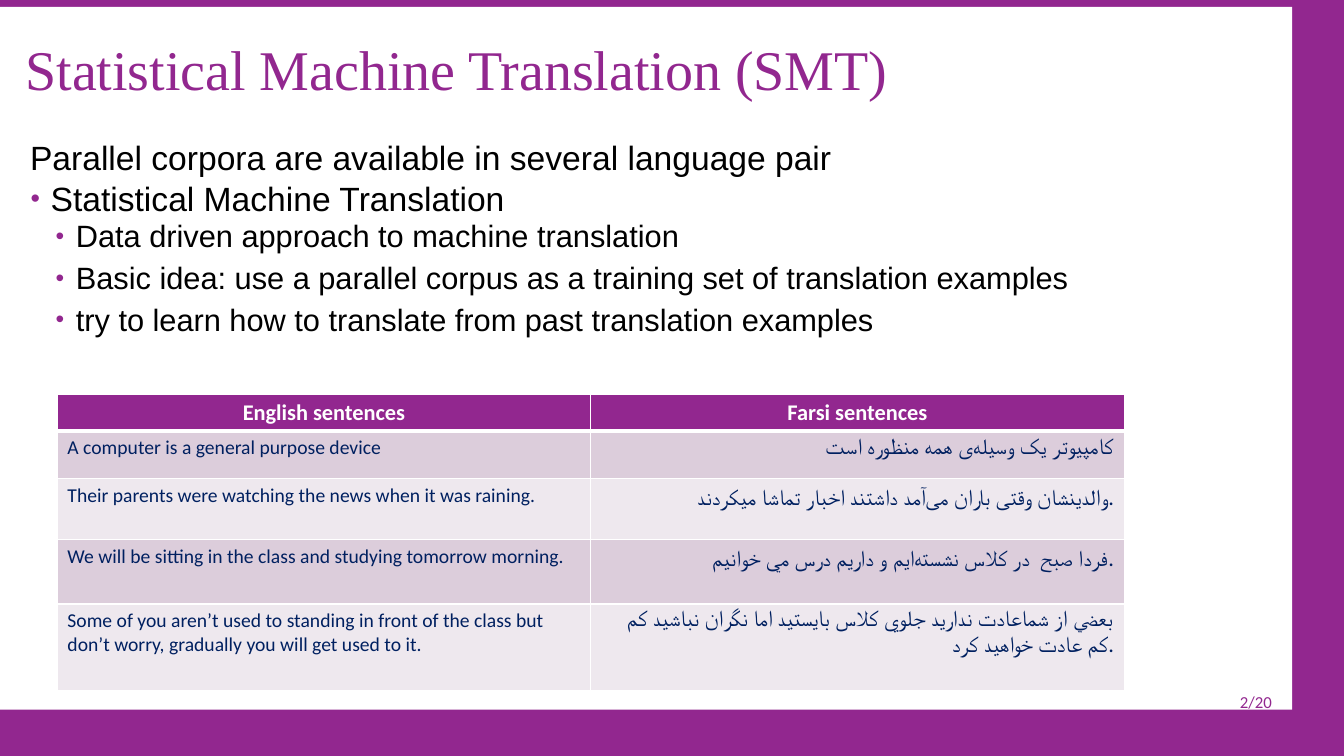
"""Build the slide on statistical machine translation with its sentence-pair table."""
from dataclasses import dataclass
from typing import Any

from lxml.etree import SubElement
from pptx import Presentation
from pptx.dml.color import RGBColor
from pptx.enum.shapes import MSO_SHAPE
from pptx.enum.text import MSO_ANCHOR, MSO_AUTO_SIZE, PP_ALIGN
from pptx.oxml.ns import qn
from pptx.util import Pt

PURPLE = RGBColor(0x92, 0x27, 0x8F)
WHITE = RGBColor(0xFF, 0xFF, 0xFF)
BLACK = RGBColor(0x00, 0x00, 0x00)
NAVY = RGBColor(0x00, 0x20, 0x60)
BAND_DARK = RGBColor(0xDC, 0xCD, 0xDB)
BAND_LIGHT = RGBColor(0xEE, 0xE8, 0xEE)
NON_JOINER = chr(0x200C)


@dataclass(frozen=True)
class Bullet:
    text: str
    level: int = 1
    size: float = 22
    before: float = 2
    after: float = 4


@dataclass(frozen=True)
class SentencePair:
    english: str
    farsi: str
    height: float


BULLETS = [
    Bullet("Statistical Machine Translation", 0, 24, 14, 0),
    Bullet("Data driven approach to machine translation"),
    Bullet("Basic idea: use a parallel corpus as a training set of translation examples"),
    Bullet("try to learn how to translate from past translation examples"),
]

PAIRS = [
    SentencePair("A computer is a general purpose device",
                 f"کامپیوتر یک وسیله{NON_JOINER}ی همه منظوره است", 34),
    SentencePair("Their parents were watching the news when it was raining.",
                 f"والدينشان وقتی باران می{NON_JOINER}آمد داشتند اخبار تماشا ميكردند.",
                 43.5),
    SentencePair("We will be sitting in the class and studying tomorrow morning.",
                 f"فردا صبح  در کلاس نشسته{NON_JOINER}ايم و داريم درس مي خوانيم.", 46),
    SentencePair("Some of you aren’t used to standing in front of the class but "
                 "don’t worry, gradually you will get used to it.",
                 "بعضي از شماعادت نداريد جلوي كلاس بايستيد اما نگران "
                 "نباشيد كم كم عادت خواهيد كرد.", 62),
]


def write(p: Any, text: str, *, size: float, color: RGBColor, font: str = "Calibri",
          bold: bool = False, align: PP_ALIGN = PP_ALIGN.LEFT, spacing: float = 1,
          before: float = 0, after: float = 0) -> None:
    p.alignment, p.line_spacing = align, spacing
    p.space_before, p.space_after = Pt(before), Pt(after)
    r = p.add_run()
    r.text = text
    r.font.size, r.font.name, r.font.bold = Pt(size), font, bold
    r.font.color.rgb = color


def place(sp: Any, left: float, top: float, width: float, height: float) -> None:
    sp.left, sp.top, sp.width, sp.height = Pt(left), Pt(top), Pt(width), Pt(height)


def add_panel(s: Any) -> None:
    sp = s.shapes.add_shape(MSO_SHAPE.RECTANGLE, Pt(0), Pt(5), Pt(923), Pt(502))
    sp.shadow.inherit = False
    sp.fill.solid()
    sp.fill.fore_color.rgb = WHITE
    sp.line.fill.background()
    s.shapes._spTree.insert(2, sp._element)


def add_label(s: Any, box: tuple[float, ...], text: str, anchor: MSO_ANCHOR,
              **style: Any) -> None:
    tf = s.shapes.add_textbox(*map(Pt, box)).text_frame
    tf.word_wrap = True
    tf.vertical_anchor = anchor
    write(tf.paragraphs[0], text, **style)


def add_bullet(p: Any, bullet: Bullet) -> None:
    p.level = bullet.level
    write(p, bullet.text, size=bullet.size, color=BLACK, font="Arial", spacing=0.9,
          before=bullet.before, after=bullet.after)
    pPr = p._p.get_or_add_pPr()
    pPr.set("marL", str(Pt(18 * (bullet.level + 1))))
    pPr.set("indent", str(-Pt(14.4)))
    color = SubElement(pPr, qn("a:buClr"))
    SubElement(color, qn("a:srgbClr"), val=str(PURPLE))
    SubElement(pPr, qn("a:buSzPct"), val="80000")
    SubElement(pPr, qn("a:buFont"), typeface="Arial")
    SubElement(pPr, qn("a:buChar"), char="•")


def fill_cell(cell: Any, text: str, fill: RGBColor, top: float, bottom: float,
              **style: Any) -> None:
    write(cell.text_frame.paragraphs[0], text, **style)
    tcPr = cell._tc.get_or_add_tcPr()
    for side, width in (("L", 1), ("R", 1), ("T", top), ("B", bottom)):
        ln = SubElement(tcPr, qn(f"a:ln{side}"), w=str(Pt(width)))
        SubElement(SubElement(ln, qn("a:solidFill")), qn("a:srgbClr"), val=str(WHITE))
    cell.fill.solid()
    cell.fill.fore_color.rgb = fill


def add_sentence_table(s: Any) -> None:
    heights = [26.5] + [pair.height for pair in PAIRS]
    table = s.shapes.add_table(len(heights), 2, Pt(41), Pt(281.5), Pt(762),
                               Pt(sum(heights))).table
    for row, height in zip(table.rows, heights):
        row.height = Pt(height)
    for col, text in enumerate(("English sentences", "Farsi sentences")):
        fill_cell(table.cell(0, col), text, PURPLE, 1, 3, size=16, color=WHITE,
                  bold=True, align=PP_ALIGN.CENTER)
    for i, pair in enumerate(PAIRS, 1):
        fill = BAND_DARK if i % 2 else BAND_LIGHT
        top = 3 if i == 1 else 1
        fill_cell(table.cell(i, 0), pair.english, fill, top, 1, size=14, color=NAVY)
        fill_cell(table.cell(i, 1), pair.farsi, fill, top, 1, size=16, color=NAVY,
                  align=PP_ALIGN.RIGHT)


def main() -> None:
    prs = Presentation()
    prs.slide_width, prs.slide_height = Pt(960), Pt(540)
    s = prs.slides.add_slide(prs.slide_layouts[1])
    s.background.fill.solid()
    s.background.fill.fore_color.rgb = PURPLE
    add_panel(s)

    title, body = s.shapes.title, s.placeholders[1]
    place(title, 11, 7, 906.5, 89.5)
    title.text_frame.vertical_anchor = MSO_ANCHOR.MIDDLE
    write(title.text_frame.paragraphs[0], "Statistical Machine Translation (SMT)",
          size=40, color=PURPLE, font="Times New Roman", spacing=0.9)

    place(body, 11, 126.5, 907, 353)
    tf = body.text_frame
    tf.auto_size = MSO_AUTO_SIZE.NONE
    for i, bullet in enumerate(BULLETS):
        add_bullet(tf.add_paragraph() if i else tf.paragraphs[0], bullet)

    add_label(s, (781, 486.5, 134.5, 29), "2/20", MSO_ANCHOR.MIDDLE, size=12,
              color=PURPLE, align=PP_ALIGN.RIGHT)
    add_sentence_table(s)
    add_label(s, (14.4, 94.5, 744, 65.5),
              "Parallel corpora are available in several language pair",
              MSO_ANCHOR.TOP, size=24, color=BLACK, font="Arial")
    prs.save("out.pptx")


if __name__ == "__main__":
    main()
